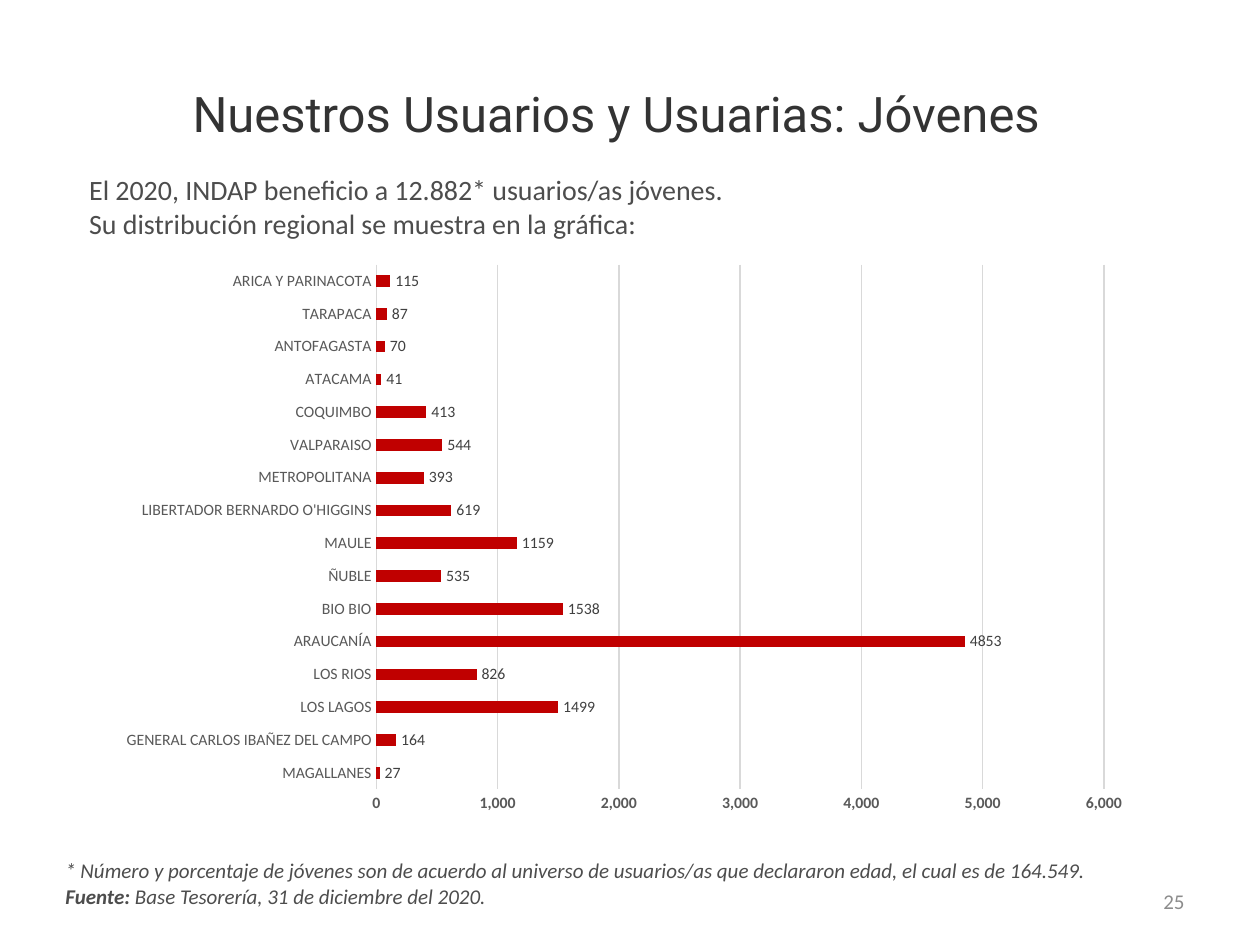
from dataclasses import dataclass

from pptx import Presentation, util as u
from pptx.chart import data as chart_data
from pptx.dml import color
from pptx.enum import chart as ch, text


@dataclass(frozen=True)
class Theme:
    heading_font: str = "Roboto"
    body_font: str = "Calibri"
    heading: str = "333333"
    body: str = "4D4D4D"
    number: str = "8C8C8C"
    axis: str = "595959"
    label: str = "404040"
    grid: str = "D9D9D9"
    bar: str = "C00000"
    title_size: float = 28
    intro_size: float = 16
    note_size: float = 12
    chart_size: float = 9


class SlideBuilder:
    """Holds the theme and the slide being built."""

    def __init__(self, slide, theme):
        self.slide = slide
        self.theme = theme

    def style(self, font, rgb, **formats):
        values = {"name": self.theme.body_font, **formats}
        for key, value in values.items():
            setattr(font, key, value)
        font.color.rgb = color.RGBColor.from_string(rgb)

    def grid_line(self, line):
        line.color.rgb = color.RGBColor.from_string(self.theme.grid)
        line.width = u.Pt(0.75)

    def title(self, wording, box):
        heading = self.slide.shapes.title
        heading.left, heading.top, heading.width, heading.height = map(u.Inches, box)
        frame = heading.text_frame
        frame.vertical_anchor = text.MSO_ANCHOR.MIDDLE
        paragraph = frame.paragraphs[0]
        paragraph.alignment = text.PP_ALIGN.CENTER
        run = paragraph.add_run()
        run.text = wording
        self.style(run.font, self.theme.heading, name=self.theme.heading_font,
                   size=u.Pt(self.theme.title_size))

    def text(self, paragraphs, box, size, rgb, align=text.PP_ALIGN.JUSTIFY,
             anchor=text.MSO_ANCHOR.TOP):
        """Each paragraph is a list of (wording, font formats) runs."""
        frame = self.slide.shapes.add_textbox(*map(u.Inches, box)).text_frame
        frame.word_wrap = True
        frame.vertical_anchor = anchor
        for index, runs in enumerate(paragraphs):
            paragraph = frame.add_paragraph() if index else frame.paragraphs[0]
            paragraph.alignment = align
            for wording, formats in runs:
                run = paragraph.add_run()
                run.text = wording
                self.style(run.font, rgb, size=u.Pt(size), **formats)

    def bar_chart(self, values, box):
        theme = self.theme
        size = u.Pt(theme.chart_size)
        regions = chart_data.CategoryChartData()
        regions.categories = list(values)
        regions.add_series("Jóvenes", list(values.values()))
        chart = self.slide.shapes.add_chart(
            ch.XL_CHART_TYPE.BAR_CLUSTERED, *map(u.Inches, box), regions).chart
        chart.has_legend = False
        chart.has_title = False
        self.style(chart.font, theme.axis, size=size)

        # Bars and their values
        plot = chart.plots[0]
        plot.gap_width = 182
        plot.vary_by_categories = False
        fill = plot.series[0].format.fill
        fill.solid()
        fill.fore_color.rgb = color.RGBColor.from_string(theme.bar)
        plot.has_data_labels = True
        labels = plot.data_labels
        labels.show_value = True
        labels.position = ch.XL_LABEL_POSITION.OUTSIDE_END
        self.style(labels.font, theme.label, size=size)

        # Axes
        for axis, bold in ((chart.category_axis, False), (chart.value_axis, True)):
            axis.major_tick_mark = axis.minor_tick_mark = ch.XL_TICK_MARK.NONE
            self.style(axis.tick_labels.font, theme.axis, size=size, bold=bold)
        self.grid_line(chart.category_axis.format.line)
        scale = chart.value_axis
        scale.minimum_scale, scale.maximum_scale, scale.major_unit = 0, 6000, 1000
        scale.tick_labels.number_format = "#,##0"
        scale.tick_labels.number_format_is_linked = False
        scale.format.line.fill.background()
        scale.has_major_gridlines = True
        self.grid_line(scale.major_gridlines.format.line)


# Young users by region, from south to north
YOUNG_USERS = {
    "MAGALLANES": 27,
    "GENERAL CARLOS IBAÑEZ DEL CAMPO": 164,
    "LOS LAGOS": 1499,
    "LOS RIOS": 826,
    "ARAUCANÍA": 4853,
    "BIO BIO": 1538,
    "ÑUBLE": 535,
    "MAULE": 1159,
    "LIBERTADOR BERNARDO O'HIGGINS": 619,
    "METROPOLITANA": 393,
    "VALPARAISO": 544,
    "COQUIMBO": 413,
    "ATACAMA": 41,
    "ANTOFAGASTA": 70,
    "TARAPACA": 87,
    "ARICA Y PARINACOTA": 115,
}


def main():
    deck = Presentation()
    deck.slide_width, deck.slide_height = u.Inches(10), u.Inches(7.5)
    theme = Theme()
    title_only = deck.slide_layouts[5]
    builder = SlideBuilder(deck.slides.add_slide(title_only), theme)

    # Title and introduction
    builder.title("Nuestros Usuarios y Usuarias: Jóvenes", (0.39, 0.41, 9, 0.97))
    builder.text(
        [[("El 2020, INDAP beneficio a 12.882* usuarios/as jóvenes.", {})],
         [("Su distribución regional se muestra en la gráfica:", {})]],
        (0.61, 1.32, 9, 0.64), theme.intro_size, theme.body)

    # Regional distribution
    builder.bar_chart(YOUNG_USERS, (0.84, 2.01, 8.23, 4.53))

    # Note and source
    italic = {"italic": True}
    builder.text(
        [[("* Número y porcentaje de jóvenes son de acuerdo al universo de "
           "usuarios/as que declararon edad, el cual es de 164.549.", italic)],
         [("Fuente: ", {**italic, "bold": True}),
          ("Base Tesorería, 31 de diciembre del 2020.", italic)]],
        (0.42, 6.76, 8.65, 0.5), theme.note_size, theme.body)

    # Page number
    builder.text([[("25", {})]], (7.17, 6.95, 2.33, 0.4), theme.note_size,
                 theme.number, text.PP_ALIGN.RIGHT, text.MSO_ANCHOR.MIDDLE)

    deck.save("out.pptx")


if __name__ == "__main__":
    main()
